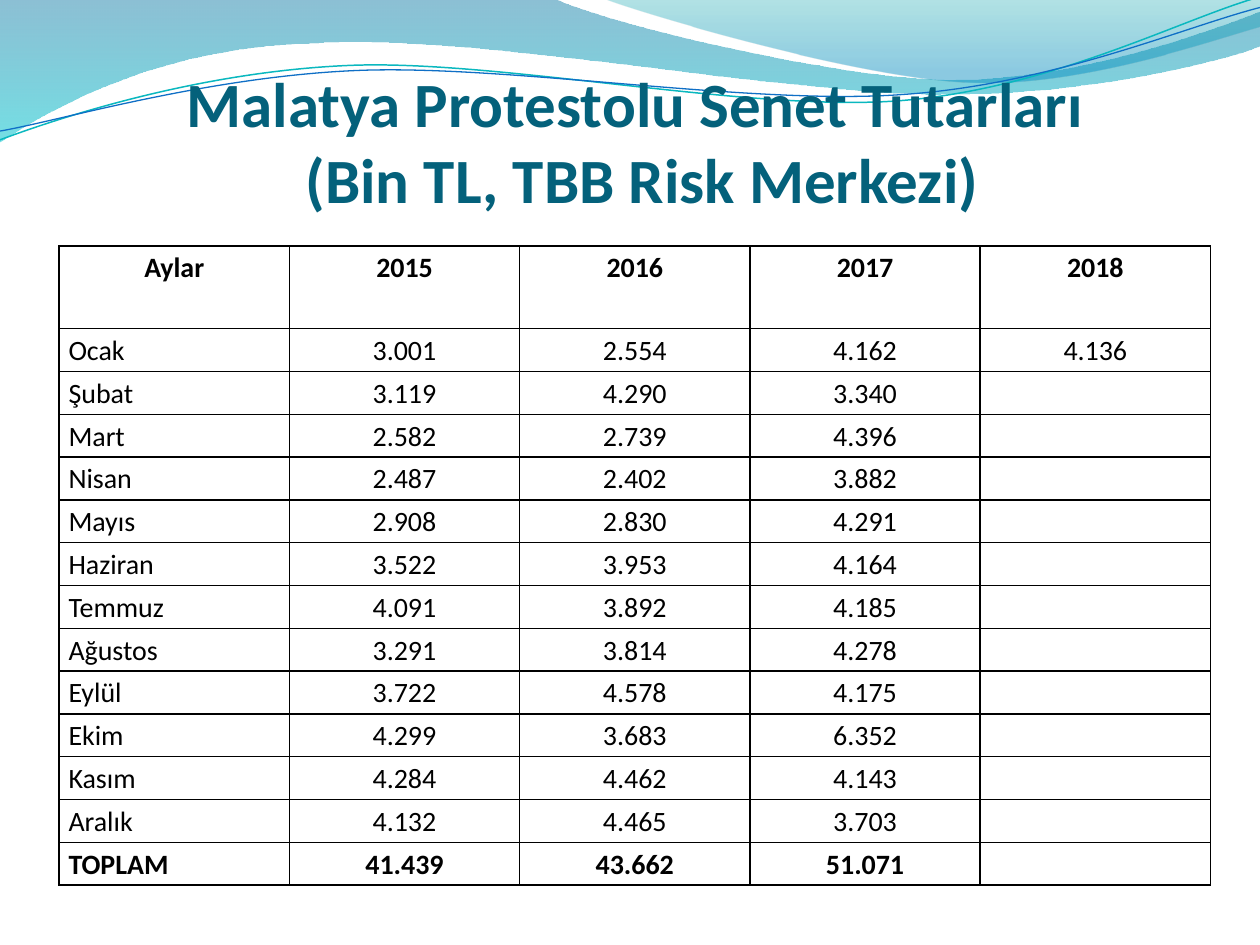
from dataclasses import dataclass
from itertools import islice
from math import cos, radians, sin

from lxml.etree import SubElement
from pptx import Presentation
from pptx.dml.color import RGBColor
from pptx.enum.text import MSO_ANCHOR, PP_ALIGN
from pptx.oxml.ns import qn
from pptx.util import Pt

FONT = "Calibri"

TITLE = ["Malatya Protestolu Senet Tutarları", " (Bin TL, TBB Risk Merkezi)"]
HEADER = ("Aylar", "2015", "2016", "2017", "2018")
MONTHS = [
    ("Ocak", "3.001", "2.554", "4.162", "4.136"),
    ("Şubat", "3.119", "4.290", "3.340", ""),
    ("Mart", "2.582", "2.739", "4.396", ""),
    ("Nisan", "2.487", "2.402", "3.882", ""),
    ("Mayıs", "2.908", "2.830", "4.291", ""),
    ("Haziran", "3.522", "3.953", "4.164", ""),
    ("Temmuz", "4.091", "3.892", "4.185", ""),
    ("Ağustos", "3.291", "3.814", "4.278", ""),
    ("Eylül", "3.722", "4.578", "4.175", ""),
    ("Ekim", "4.299", "3.683", "6.352", ""),
    ("Kasım", "4.284", "4.462", "4.143", ""),
    ("Aralık", "4.132", "4.465", "3.703", ""),
]
TOTAL = ("TOPLAM", "41.439", "43.662", "51.071", "")


@dataclass
class Stop:
    position: float
    color: str
    opacity: int


@dataclass
class Wave:
    """Two numbers in a segment make a straight line, six a Bézier curve."""
    start: tuple
    segments: list
    stops: tuple = ()
    line_color: str = ""
    line_width: float = 0
    rotation: float = 0
    pivot: tuple = (0, 0)


WAVES = [
    Wave((0, 0),
         [(316.8, -0.7), (342.7, 12.2, 478.1, 45.4, 545.8, 45.4),
          (614.2, 45.4, 689.8, 18.7, 720, 6.5), (720.7, 25.9),
          (709.2, 31.7, 626.4, 54.7, 537.1, 54), (447.8, 54, 275, 20.2, 185, 24.5),
          (92.9, 25.9, 33.1, 59.8, -0.7, 81.4), (0, 0)],
         stops=(Stop(0, "0074A1", 45), Stop(1, "00C6CF", 55))),
    Wave((344.9, -0.7),
         [(366.5, 7.9, 491, 44.6, 553.7, 46.8),
          (616.3, 49.7, 691.9, 23, 720, 15.1), (720, 0), (344.9, -0.7)],
         stops=(Stop(0, "00A1A9", 30), Stop(0.8, "008BBF", 45))),
    Wave((0, 79.9),
         [(34.6, 67, 113.8, 41, 199.4, 37.4), (284.4, 33.8, 427, 64.1, 513.4, 57.6),
          (599.8, 51.1, 675.4, 10.8, 718.6, -1.4)],
         line_color="0AB8BF", line_width=0.85, rotation=-2.7, pivot=(359.3, 41.4)),
    Wave((0, 74.9),
         [(33.8, 69.1, 118.1, 43.9, 203.8, 40.3), (290.2, 36.7, 429.8, 60.5, 516.2, 54),
          (601.9, 48.2, 677.5, 15.1, 720, 4.3)],
         line_color="0F6FC6", line_width=0.75, rotation=-2.7, pivot=(359.6, 42.5)),
]


def rgb(color: str) -> RGBColor:
    return RGBColor.from_string(color)


def level(wave: Wave, x: float, y: float) -> tuple:
    """Place a point as it lies before the shape is rotated."""
    angle = radians(-wave.rotation)
    dx, dy = x - wave.pivot[0], y - wave.pivot[1]
    return (Pt(wave.pivot[0] + dx * cos(angle) - dy * sin(angle)),
            Pt(wave.pivot[1] + dx * sin(angle) + dy * cos(angle)))


def bend(shape, segments: list) -> None:
    """Join the three lines of each six-number segment into one curve."""
    lines = iter(list(shape._element.iter(qn("a:lnTo"))))
    for segment in segments:
        first, *others = islice(lines, len(segment) // 2)
        if others:
            first.tag = qn("a:cubicBezTo")
        for line in others:
            first.append(line[0])
            line.getparent().remove(line)


def draw_wave(slide, wave: Wave) -> None:
    points = [level(wave, *segment[i:i + 2])
              for segment in wave.segments for i in range(0, len(segment), 2)]
    builder = slide.shapes.build_freeform(*level(wave, *wave.start))
    builder.add_line_segments(points, close=bool(wave.stops))
    shape = builder.convert_to_shape()
    bend(shape, wave.segments)
    shape.rotation = wave.rotation
    shape.shadow.inherit = False
    if not wave.stops:
        shape.fill.background()
        shape.line.color.rgb = rgb(wave.line_color)
        shape.line.width = Pt(wave.line_width)
        return
    shape.line.fill.background()
    shape.fill.gradient()
    shape.fill.gradient_angle = 270
    for gradient_stop, stop in zip(shape.fill.gradient_stops, wave.stops):
        gradient_stop.position = stop.position
        gradient_stop.color.rgb = rgb(stop.color)
    for tint, stop in zip(shape._element.spPr.iter(qn("a:srgbClr")), wave.stops):
        SubElement(tint, qn("a:alpha"), val=str(stop.opacity * 1000))


def write(frame, lines: list, *, size: float, color: str = "000000", bold: bool = False,
          align=PP_ALIGN.CENTER, spacing: float = 1.0) -> None:
    paragraph = frame.paragraphs[0]
    paragraph.alignment = align
    paragraph.line_spacing = spacing
    for index, line in enumerate(lines):
        if index:
            paragraph.add_line_break()
        run = paragraph.add_run()
        run.text = line
        run.font.name = FONT
        run.font.size = Pt(size)
        run.font.bold = bold
        run.font.color.rgb = rgb(color)


def draw_title(slide) -> None:
    box = slide.shapes.add_textbox(Pt(36), Pt(55), Pt(653.8), Pt(68.4))
    frame = box.text_frame
    frame.word_wrap = True
    frame.vertical_anchor = MSO_ANCHOR.BOTTOM
    frame.margin_left = frame.margin_right = frame.margin_bottom = 0
    frame.margin_top = Pt(3.6)
    write(frame, TITLE, size=36, color="04617B", bold=True)


def add_borders(cell, color: str, width: float) -> None:
    properties = cell._tc.get_or_add_tcPr()
    for side in ("lnL", "lnR", "lnT", "lnB"):
        border = SubElement(properties, qn(f"a:{side}"), w=str(Pt(width)))
        SubElement(SubElement(border, qn("a:solidFill")), qn("a:srgbClr"), val=color)


def draw_table(slide) -> None:
    records = [HEADER, *MONTHS, TOTAL]
    table = slide.shapes.add_table(len(records), len(HEADER), Pt(33.8), Pt(140.6),
                                   Pt(658), Pt(365.5)).table
    table.horz_banding = False
    for column in table.columns:
        column.width = Pt(131.6)
    for row_index, record in enumerate(records):
        table.rows[row_index].height = Pt(24.48 if row_index else 47.2)
        for column_index, entry in enumerate(record):
            cell = table.cell(row_index, column_index)
            cell.margin_left = cell.margin_right = Pt(5.4)
            cell.margin_top = cell.margin_bottom = 0
            add_borders(cell, "000000", 1)
            cell.fill.background()
            is_label = row_index > 0 and column_index == 0
            write(cell.text_frame, [entry] if entry else [], size=16, spacing=1.15,
                  bold=record in (HEADER, TOTAL),
                  align=PP_ALIGN.LEFT if is_label else PP_ALIGN.CENTER)


def main() -> None:
    presentation = Presentation()
    presentation.slide_width, presentation.slide_height = Pt(720), Pt(540)
    slide = presentation.slides.add_slide(presentation.slide_layouts[6])

    # Wave decoration along the top edge
    for wave in WAVES:
        draw_wave(slide, wave)

    # Title and monthly amounts
    draw_title(slide)
    draw_table(slide)
    presentation.save("out.pptx")


if __name__ == "__main__":
    main()
